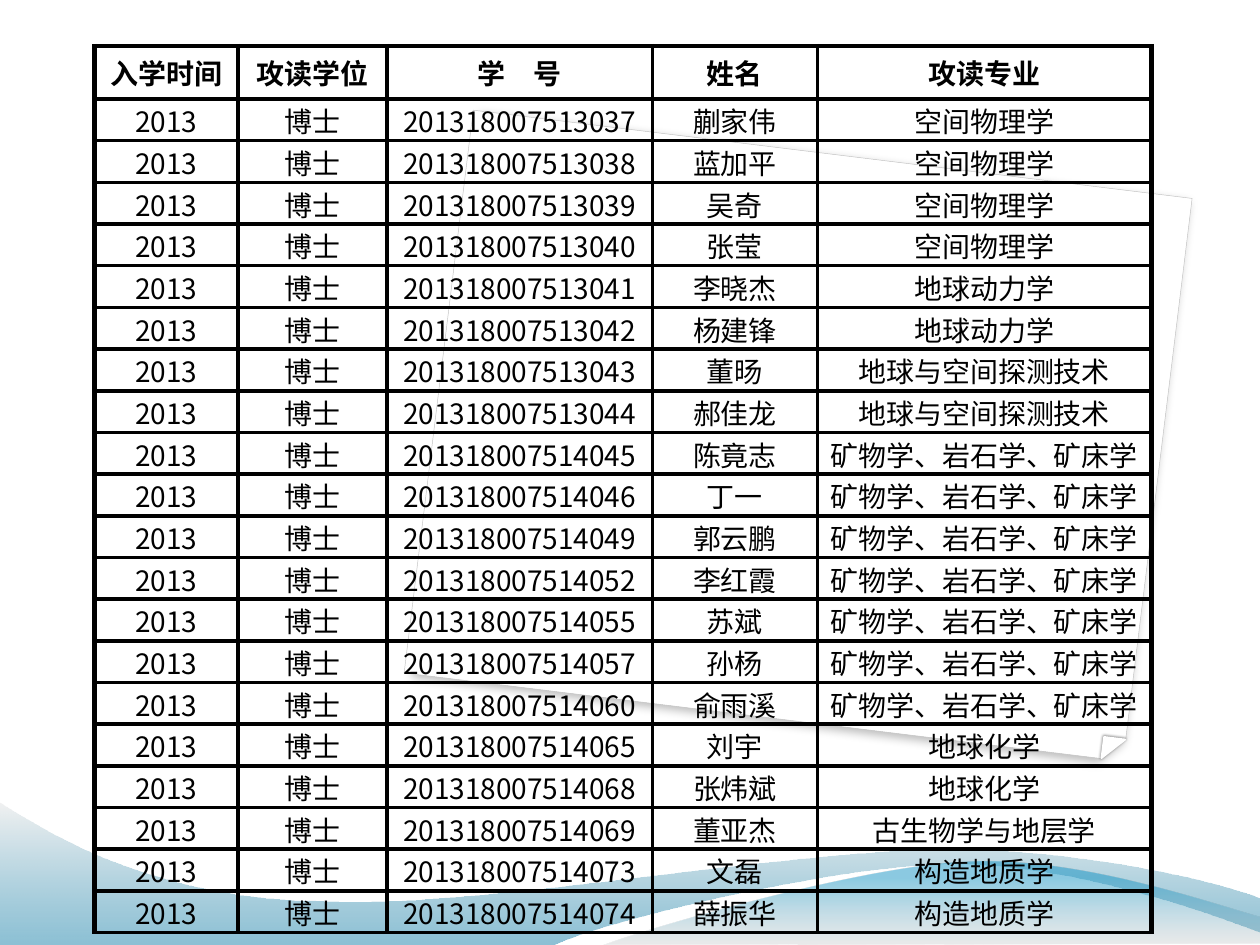
from lxml.etree import SubElement
from pptx import Presentation
from pptx.dml.color import RGBColor
from pptx.enum.shapes import MSO_SHAPE
from pptx.enum.text import MSO_ANCHOR, PP_ALIGN
from pptx.oxml.ns import qn
from pptx.util import Cm, Pt

THEME = {
    "font": "Noto Sans CJK SC", "size": 16,
    "ink": "000000", "paper": "FFFFFF", "edge": "C0C0C0",
    "deep": "0074A1", "mist": "E7E7E7", "blue": "008BBF", "grey": "BDBDBD",
    "frame": 3, "rule": 2.25,
}

HEADERS = ["入学时间", "攻读学位", "学　号", "姓名", "攻读专业"]
YEAR, DEGREE, ID_PREFIX = "2013", "博士", "20131800751"
STUDENTS = [
    ("空间物理学", [("3037", "蒯家伟"), ("3038", "蓝加平"),
                    ("3039", "吴奇"), ("3040", "张莹")]),
    ("地球动力学", [("3041", "李晓杰"), ("3042", "杨建锋")]),
    ("地球与空间探测技术", [("3043", "董旸"), ("3044", "郝佳龙")]),
    ("矿物学、岩石学、矿床学", [
        ("4045", "陈竟志"), ("4046", "丁一"), ("4049", "郭云鹏"),
        ("4052", "李红霞"), ("4055", "苏斌"), ("4057", "孙杨"),
        ("4060", "俞雨溪")]),
    ("地球化学", [("4065", "刘宇"), ("4068", "张炜斌")]),
    ("古生物学与地层学", [("4069", "董亚杰")]),
    ("构造地质学", [("4073", "文磊"), ("4074", "薛振华")]),
]
COL_WIDTHS = [2.89, 3, 5.35, 3.33, 6.73]
HEADER_HEIGHT, ROW_HEIGHT = 0.94, 0.84
TABLE_LEFT, TABLE_TOP = 1.91, 0.93

# Wave outlines in cm: two numbers draw a line, six numbers a Bezier curve.
BACK_WAVE = [
    (0, 19.05), (11.18, 19.05),
    (12.09, 18.59, 16.87, 17.42, 19.25, 17.42),
    (21.67, 17.42, 24.33, 18.39, 25.4, 18.8),
    (25.42, 18.11),
    (24.97, 17.91, 22.1, 17.09, 18.95, 17.12),
    (15.8, 17.12, 9.7, 18.31, 6.53, 18.16),
    (3.28, 18.14, 1.17, 16.92, -0.02, 16.15),
]
FRONT_WAVE = [
    (12.17, 19.05),
    (12.93, 18.75, 17.32, 17.45, 19.53, 17.37),
    (21.74, 17.27, 24.41, 18.21, 25.4, 18.49),
    (25.4, 19.02),
]
# colour, position, opacity in percent; from the bottom upwards
WAVES = [
    (BACK_WAVE, [("deep", 0, 45), ("mist", 1, 55)]),
    (FRONT_WAVE, [("grey", 0, 30), ("blue", 0.8, 45)]),
]


def rgb(name):
    return RGBColor.from_string(THEME[name])


def set_opacity(color_el, percent):
    SubElement(color_el, qn("a:alpha")).set("val", str(percent * 1000))


def add_paper(s, kind, box, line, width, opacity, blur, dist, angle, **skew):
    """White sheet part, mirrored vertically and tilted, with a soft shadow."""
    sp = s.shapes.add_shape(kind, *map(Cm, box))
    sp.rotation = 7
    sp.fill.solid()
    sp.fill.fore_color.rgb = rgb("paper")
    sp.line.color.rgb = rgb(line)
    sp.line.width = Pt(width)
    sp.shadow.inherit = False
    spPr = sp._element.spPr
    spPr.get_or_add_xfrm().set("flipV", "1")
    shadow = SubElement(spPr.find(qn("a:effectLst")), qn("a:outerShdw"),
                        blurRad=str(Pt(blur)), dist=str(Pt(dist)),
                        dir=str(angle * 60000), algn="tl", rotWithShape="0",
                        **skew)
    color = SubElement(shadow, qn("a:srgbClr"), val=THEME["ink"])
    set_opacity(color, opacity)
    return sp


def bend_segments(sp, segments):
    """Turn the drawn lines of a freeform into curves where one is given."""
    lines = list(sp._element.spPr.iter(qn("a:lnTo")))
    for line, seg in zip(lines, segments):
        if len(seg) == 2:
            continue
        curve = SubElement(line.getparent(), qn("a:cubicBezTo"))
        for x, y in zip(seg[::2], seg[1::2]):
            SubElement(curve, qn("a:pt"),
                       x=str(Cm(x) - sp.left), y=str(Cm(y) - sp.top))
        line.getparent().replace(line, curve)


def add_wave(s, outline, stops):
    start, *anchors = [(Cm(seg[-2]), Cm(seg[-1])) for seg in outline]
    builder = s.shapes.build_freeform(*start)
    builder.add_line_segments(anchors, close=True)
    sp = builder.convert_to_shape()
    bend_segments(sp, outline[1:])
    sp.shadow.inherit = False
    sp.line.fill.background()
    sp.fill.gradient()
    sp.fill.gradient_angle = 90
    for stop, (color, position, _) in zip(sp.fill.gradient_stops, stops):
        stop.color.rgb = rgb(color)
        stop.position = position
    gradient_colors = list(sp._element.spPr.iter(qn("a:srgbClr")))
    for color_el, (_, _, opacity) in zip(gradient_colors, stops):
        set_opacity(color_el, opacity)


def set_borders(cell, widths):
    tcPr = cell._tc.get_or_add_tcPr()
    for side, width in zip("LRTB", widths):
        ln = SubElement(tcPr, qn("a:ln" + side), w=str(Pt(width)))
        fill = SubElement(ln, qn("a:solidFill"))
        SubElement(fill, qn("a:srgbClr"), val=THEME["ink"])


def write_cell(cell, text, bold):
    p = cell.text_frame.paragraphs[0]
    p.alignment = PP_ALIGN.CENTER
    r = p.add_run()
    r.text = text
    r.font.size = Pt(THEME["size"])
    r.font.bold = bold
    r.font.color.rgb = rgb("ink")
    r.font.name = THEME["font"]
    SubElement(r._r.get_or_add_rPr(), qn("a:ea"), typeface=THEME["font"])


def add_roster(s):
    rows = [HEADERS] + [[YEAR, DEGREE, ID_PREFIX + number, name, major]
                        for major, people in STUDENTS
                        for number, name in people]
    heights = [HEADER_HEIGHT] + [ROW_HEIGHT] * (len(rows) - 1)
    table = s.shapes.add_table(
        len(rows), len(HEADERS), Cm(TABLE_LEFT), Cm(TABLE_TOP),
        Cm(sum(COL_WIDTHS)), Cm(sum(heights))).table
    table.first_row = table.horz_banding = False
    for column, width in zip(table.columns, COL_WIDTHS):
        column.width = Cm(width)
    frame, rule = THEME["frame"], THEME["rule"]
    last = len(HEADERS) - 1
    for i, (row, height) in enumerate(zip(rows, heights)):
        table.rows[i].height = Cm(height)
        for j, text in enumerate(row):
            cell = table.cell(i, j)
            write_cell(cell, text, bold=i == 0)
            cell.vertical_anchor = MSO_ANCHOR.BOTTOM if i else MSO_ANCHOR.MIDDLE
            if i:
                cell.margin_left = cell.margin_right = cell.margin_top = Cm(0.02)
                cell.margin_bottom = 0
            set_borders(cell, (rule if j else frame,
                               frame if j == last else rule,
                               rule if i else frame, rule))
            cell.fill.background()


def main():
    prs = Presentation()
    prs.slide_width, prs.slide_height = Cm(25.4), Cm(19.05)
    s = prs.slides.add_slide(prs.slide_layouts[6])
    s.background.fill.solid()
    s.background.fill.fore_color.rgb = rgb("paper")
    sheet = add_paper(s, MSO_SHAPE.SNIP_ROUND_RECTANGLE, (8.79, 3.07, 14.6, 11.43),
                      "edge", 0.25, opacity=25, blur=5, dist=3, angle=125,
                      sx="98500", sy="100000", kx="100000")
    sheet.adjustments[0], sheet.adjustments[1] = 0, 0.04
    add_paper(s, MSO_SHAPE.RIGHT_TRIANGLE, (22.23, 14.88, 0.43, 0.43),
              "paper", 1, opacity=47, blur=1.6, dist=0.5, angle=215)
    for outline, stops in WAVES:
        add_wave(s, outline, stops)
    add_roster(s)
    prs.save("out.pptx")


if __name__ == "__main__":
    main()
